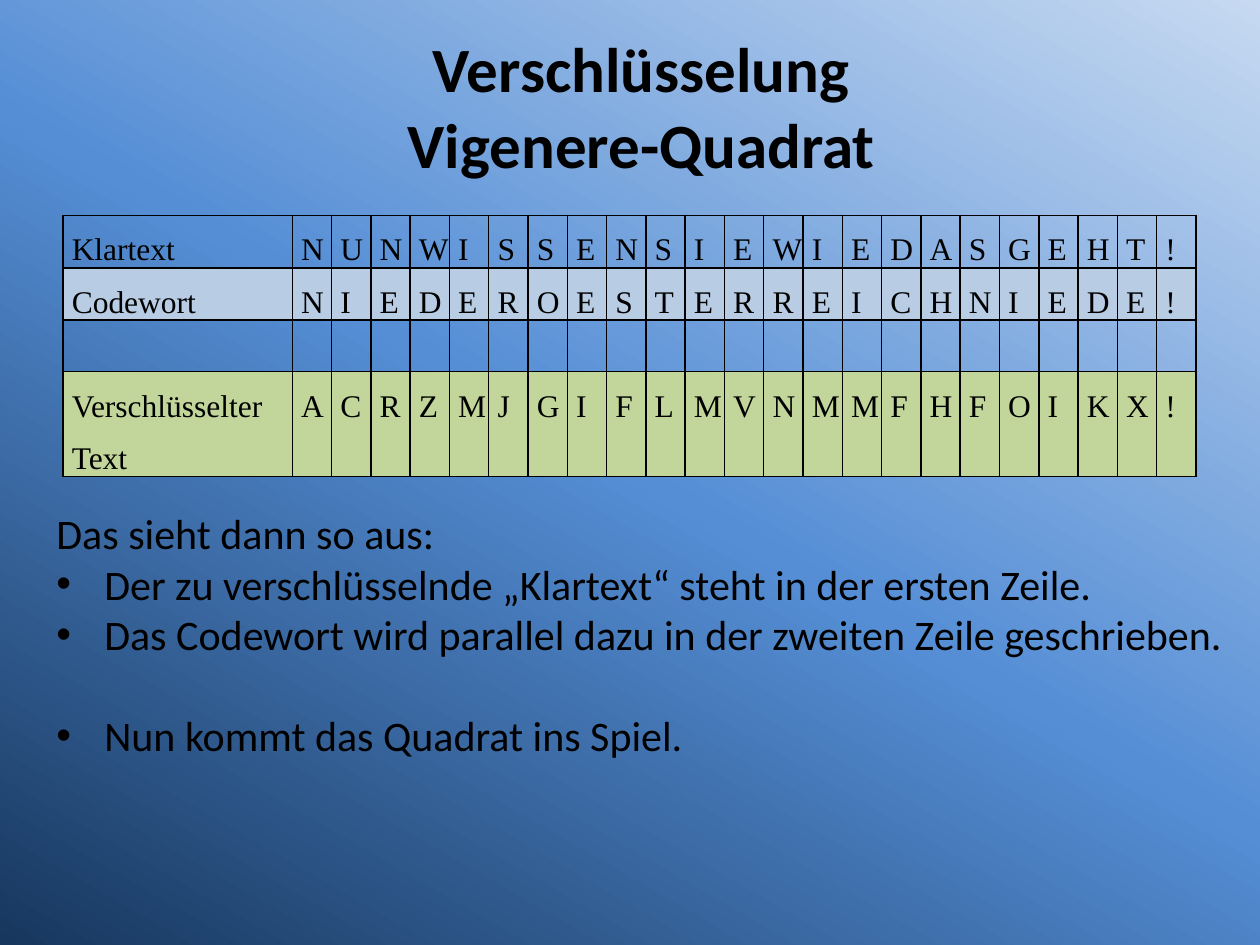
import copy
import lxml.etree
import pptx
import pptx.dml.color
import pptx.enum.text
import pptx.oxml.ns
import pptx.util

Inches = pptx.util.Inches
Pt = pptx.util.Pt
qn = pptx.oxml.ns.qn

ROWS = [
    ("Klartext", "NUNWISSENSIEWIEDASGEHT!", None, 0.41),
    ("Codewort", "NIEDEROESTERREICHNIEDE!", "B8CCE4", 0.41),
    ("", " " * 23, None, 0.41),
    ("Verschlüsselter Text", "ACRZMJGIFLMVNMMFHFOIKX!", "C2D69B", 0.83),
]
POINTS = [
    "Der zu verschlüsselnde „Klartext“ steht in der ersten Zeile.",
    "Das Codewort wird parallel dazu in der zweiten Zeile geschrieben.",
    "Nun kommt das Quadrat ins Spiel.",
]


def color(code):
    return pptx.dml.color.RGBColor.from_string(code)


def style(para, size, face, bold=False):
    for run in para.runs:
        run.font.size = Pt(size)
        run.font.name = face
        run.font.bold = bold
        run.font.color.rgb = color("000000")


def add_back(slide):
    fill = slide.background.fill
    fill.gradient()
    fill.gradient_angle = 60
    stops = slide.element.find(".//" + qn("a:gsLst"))
    stops.insert(1, copy.deepcopy(stops[0]))
    shades = [(0, "17375E"), (0.5, "558ED5"), (1, "C6D9F1")]
    for stop, (place, code) in zip(fill.gradient_stops, shades):
        stop.position = place
        stop.color.rgb = color(code)


def add_title(slide):
    title = slide.shapes.title
    title.left, title.top = Inches(0.59), Inches(0.21)
    title.width, title.height = Inches(9), Inches(1.25)
    frame = title.text_frame
    frame.text = "Verschlüsselung\vVigenere-Quadrat"
    frame.vertical_anchor = pptx.enum.text.MSO_ANCHOR.MIDDLE
    para = frame.paragraphs[0]
    para.alignment = pptx.enum.text.PP_ALIGN.CENTER
    style(para, 36, "Calibri", True)
    props = para.runs[0].font.element if hasattr(para.runs[0].font, "element") else None
    for gap in title.element.iter(qn("a:br")):
        props = title.element.find(".//" + qn("a:r") + "/" + qn("a:rPr"))
        gap.append(copy.deepcopy(props))


def add_edges(cell):
    props = cell.text_frame._txBody.getparent().get_or_add_tcPr()
    for spot, side in enumerate(("lnL", "lnR", "lnT", "lnB")):
        line = lxml.etree.Element(qn("a:" + side), w=str(Pt(1)))
        fill = lxml.etree.SubElement(line, qn("a:solidFill"))
        lxml.etree.SubElement(fill, qn("a:srgbClr"), val="000000")
        props.insert(spot, line)


def fill_cell(cell, text, code):
    cell.text = text
    cell.margin_left = cell.margin_right = Inches(0.07)
    cell.margin_top = cell.margin_bottom = 0
    para = cell.text_frame.paragraphs[0]
    para.line_spacing = 1.5
    style(para, 18, "Times New Roman")
    if code:
        cell.fill.solid()
        cell.fill.fore_color.rgb = color(code)
    else:
        cell.fill.background()
    add_edges(cell)


def add_grid(slide):
    count = len(ROWS[0][1])
    table = slide.shapes.add_table(
        len(ROWS), count + 1, Inches(0.5), Inches(1.71), Inches(9), Inches(2.06)
    ).table
    table.first_row = False
    table.horz_banding = False
    for col in table.columns:
        col.width = Inches((9 - 1.82) / count)
    table.columns[0].width = Inches(1.82)
    for row, (label, chars, code, height) in zip(table.rows, ROWS):
        row.height = Inches(height)
        for cell, text in zip(row.cells, [label, *chars]):
            fill_cell(cell, text.strip(), code)


def add_bullet(para):
    props = para._p.get_or_add_pPr()
    props.set("marL", str(Inches(0.38)))
    props.set("indent", str(Inches(-0.38)))
    lxml.etree.SubElement(props, qn("a:buFont"), typeface="Arial")
    lxml.etree.SubElement(props, qn("a:buChar"), char="•")


def add_notes(slide):
    box = slide.shapes.add_textbox(
        Inches(0.35), Inches(3.98), Inches(9.46), Inches(2.52)
    )
    frame = box.text_frame
    frame.word_wrap = True
    frame.text = "\n".join(["Das sieht dann so aus:", *POINTS])
    for para in frame.paragraphs:
        style(para, 24, "Calibri")
    frame.paragraphs[-1].space_before = Pt(29)
    for para in frame.paragraphs[1:]:
        add_bullet(para)


def main():
    deck = pptx.Presentation()
    deck.slide_width, deck.slide_height = Inches(10), Inches(7.5)
    slide = deck.slides.add_slide(deck.slide_layouts[5])
    add_back(slide)
    add_title(slide)
    add_grid(slide)
    add_notes(slide)
    deck.save("out.pptx")


if __name__ == "__main__":
    main()
